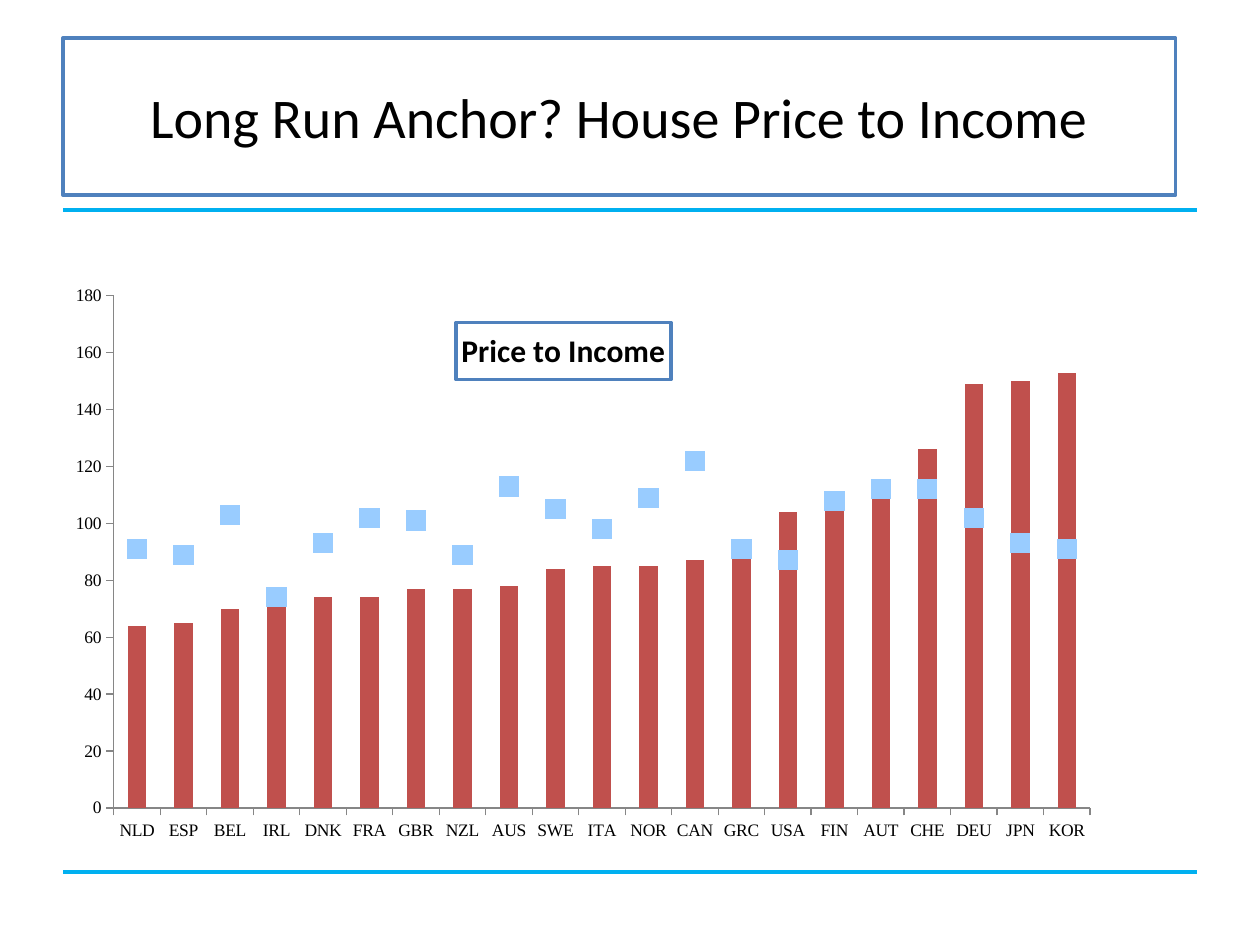
from lxml import etree
from pptx import Presentation
from pptx.chart.data import CategoryChartData
from pptx.dml.color import RGBColor
from pptx.enum.chart import XL_CHART_TYPE, XL_MARKER_STYLE, XL_TICK_MARK
from pptx.enum.shapes import MSO_CONNECTOR
from pptx.enum.text import MSO_ANCHOR, PP_ALIGN
from pptx.oxml import parse_xml
from pptx.oxml.ns import nsdecls, qn
from pptx.util import Inches, Pt

CLUSTERED = XL_CHART_TYPE.COLUMN_CLUSTERED
SQUARE = XL_MARKER_STYLE.SQUARE
TICK_OUTSIDE, TICK_NONE = XL_TICK_MARK.OUTSIDE, XL_TICK_MARK.NONE
STRAIGHT = MSO_CONNECTOR.STRAIGHT
MIDDLE, CENTER = MSO_ANCHOR.MIDDLE, PP_ALIGN.CENTER

COLORS = {
    "text": "000000", "white": "FFFFFF", "frame": "4F81BD", "rule": "00B0F0",
    "bar": "C0504D", "marker": "99CCFF", "axis": "868686",
}
HEADING_FONT, AXIS_FONT = "Calibri", "Times New Roman"

COUNTRIES = ("NLD ESP BEL IRL DNK FRA GBR NZL AUS SWE ITA NOR CAN GRC USA "
             "FIN AUT CHE DEU JPN KOR").split()
BAR_VALUES = [64, 65, 70, 71, 74, 74, 77, 77, 78, 84, 85, 85, 87, 93, 104,
              106, 112, 126, 149, 150, 153]
MARKER_VALUES = [91, 89, 103, 74, 93, 102, 101, 89, 113, 105, 98, 109, 122,
                 91, 87, 108, 112, 112, 102, 93, 91]


def color(name):
    return RGBColor.from_string(COLORS[name])


def set_font(font, size, name, bold=False):
    font.size, font.name, font.bold = Pt(size), name, bold
    font.color.rgb = color("text")


def set_frame(item):
    """White fill and blue outline, for a shape or a chart title's format."""
    item.fill.solid()
    item.fill.fore_color.rgb = color("white")
    item.line.color.rgb = color("frame")
    item.line.width = Pt(2)


def add_title(slide, left, top, width, height):
    title = slide.shapes.title
    title.left, title.top, title.width, title.height = left, top, width, height
    set_frame(title)
    title.text_frame.text = "Long Run Anchor? House Price to Income"
    title.text_frame.vertical_anchor = MIDDLE
    paragraph = title.text_frame.paragraphs[0]
    paragraph.alignment = CENTER
    set_font(paragraph.font, 32, HEADING_FONT)


def add_rule(slide, left, top, width):
    rule = slide.shapes.add_connector(STRAIGHT, left, top, left + width, top)
    rule.line.color.rgb = color("rule")
    rule.line.width = Pt(2.25)
    etree.SubElement(rule._element.spPr, qn("a:effectLst"))


def remove_children(element, tag):
    for child in element.findall(qn(tag)):
        element.remove(child)


def set_layout(element, position, **values):
    """Give a chart part a manual layout, in fractions of the chart."""
    remove_children(element, "c:layout")
    modes = {"xMode": "edge", "yMode": "edge"}
    if "w" in values:
        modes = {"layoutTarget": "inner", **modes}
    items = "".join(f'<c:{name} val="{value}"/>'
                    for name, value in {**modes, **values}.items())
    element.insert(position, parse_xml(
        f'<c:layout {nsdecls("c")}><c:manualLayout>{items}</c:manualLayout></c:layout>'))


def move_last_series_to_line(chart):
    """Turn the last column series into a line plot on the same axes."""
    bar_chart = chart.plots[0]._element
    series = bar_chart.findall(qn("c:ser"))[-1]
    remove_children(series, "c:invertIfNegative")
    line_chart = parse_xml(
        f'<c:lineChart {nsdecls("c")}><c:grouping val="standard"/>'
        '<c:varyColors val="0"/><c:marker val="1"/></c:lineChart>')
    line_chart.insert(2, series)
    for axis in bar_chart.findall(qn("c:axId")):
        etree.SubElement(line_chart, qn("c:axId"), val=axis.get("val"))
    bar_chart.addnext(line_chart)


def style_axis(axis):
    axis.has_major_gridlines = False
    axis.major_tick_mark, axis.minor_tick_mark = TICK_OUTSIDE, TICK_NONE
    axis.format.line.color.rgb = color("axis")
    set_font(axis.tick_labels.font, 10, AXIS_FONT)


def add_chart_title(chart):
    title = chart.chart_title
    title.text_frame.text = "Price to Income"
    set_font(title.text_frame.paragraphs[0].font, 18, HEADING_FONT, bold=True)
    set_frame(title.format)
    set_layout(title._element, 1, x=0.34, y=0.07)
    remove_children(title._element, "c:overlay")
    title._element.insert(2, parse_xml(f'<c:overlay {nsdecls("c")} val="1"/>'))


def add_price_chart(slide, left, top, width, height):
    data = CategoryChartData()
    data.categories = COUNTRIES
    data.add_series("Series 1", BAR_VALUES)
    data.add_series("Series 2", MARKER_VALUES)
    chart = slide.shapes.add_chart(CLUSTERED, left, top, width, height, data).chart
    chart.has_legend = False
    set_font(chart.font, 10, HEADING_FONT)
    add_chart_title(chart)
    move_last_series_to_line(chart)
    set_layout(chart._chartSpace.chart.plotArea, 0, x=0.044, y=0.022, w=0.845, h=0.92)

    columns, points = chart.plots
    columns.gap_width = 150
    columns.vary_by_categories = False
    bars = columns.series[0]
    bars.format.fill.solid()
    bars.format.fill.fore_color.rgb = color("bar")

    markers = points.series[0]
    markers.smooth = False
    markers.format.line.fill.background()
    markers.marker.style, markers.marker.size = SQUARE, 11
    markers.marker.format.fill.solid()
    markers.marker.format.fill.fore_color.rgb = color("marker")
    markers.marker.format.line.fill.background()

    for axis in (chart.category_axis, chart.value_axis):
        style_axis(axis)
    scale = chart.value_axis
    scale.minimum_scale, scale.maximum_scale, scale.major_unit = 0, 180, 20


def main():
    presentation = Presentation()
    presentation.slide_width, presentation.slide_height = Inches(10), Inches(7.5)
    slide = presentation.slides.add_slide(presentation.slide_layouts[5])
    margin = Inches(0.5)
    for top in (1.67, 6.92):
        add_rule(slide, margin, Inches(top), Inches(9))
    add_title(slide, margin, Inches(0.3), Inches(8.83), Inches(1.25))
    add_price_chart(slide, margin, Inches(2.25), Inches(9.17), Inches(4.42))
    presentation.save("out.pptx")


if __name__ == "__main__":
    main()
